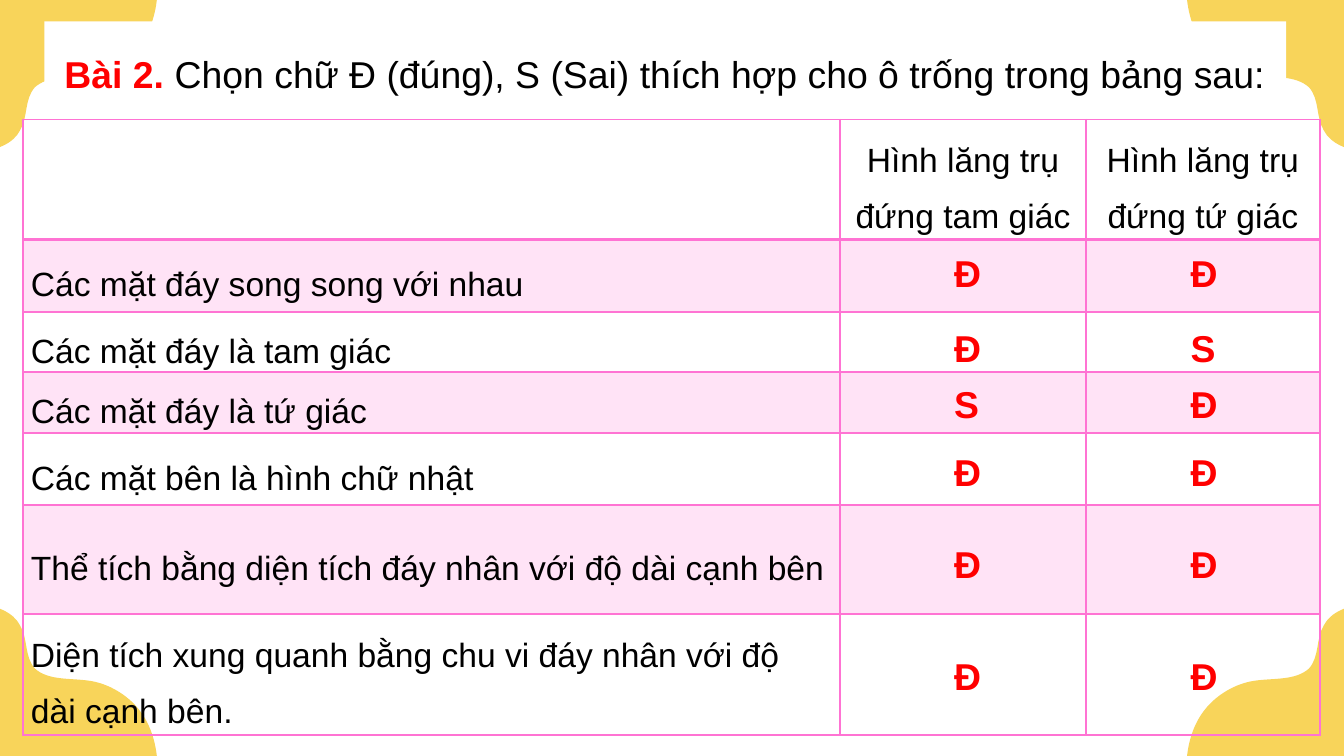
from lxml import etree
from pptx import Presentation
from pptx.dml.color import RGBColor
from pptx.enum.text import MSO_ANCHOR, MSO_AUTO_SIZE, PP_ALIGN
from pptx.oxml.ns import qn
from pptx.util import Inches, Pt

WIDTH, HEIGHT = 10, 5.625
TITLE_ONLY = 5
CENTER, LEFT = PP_ALIGN.CENTER, PP_ALIGN.LEFT
MIDDLE = MSO_ANCHOR.MIDDLE
GROW, FIXED = MSO_AUTO_SIZE.SHAPE_TO_FIT_TEXT, MSO_AUTO_SIZE.NONE
COLORS = {"yellow": "F8D45A", "pink": "FF73D3", "red": "FF0000",
          "black": "000000", "white": "FFFFFF"}

# Corner wave, as distances from the nearest slide corner: start, then curves
WAVE_START = (1.17, -0.03)
WAVE = [
    [(1.16, 0.1), (1.12, 0.24), (1.03, 0.35)],
    [(0.95, 0.45), (0.81, 0.54), (0.66, 0.56)],
    [(0.52, 0.58), (0.36, 0.56), (0.26, 0.65)],
    [(0.18, 0.74), (0.21, 0.87), (0.15, 0.97)],
    [(0.1, 1.07), (-0.03, 1.12), (-0.16, 1.13)],
    [(-0.28, 1.15), (-0.41, 1.14), (-0.54, 1.15)],
    [(-0.6, 1.16), (-0.66, 1.17), (-0.71, 1.21)],
    [(-0.75, 1.23), (-0.77, 1.27), (-0.79, 1.31)],
    [(-0.87, 1.47), (-0.88, 1.65), (-1, 1.79)],
    [(-1.02, 1.81), (-1.04, 1.84), (-1.07, 1.86)],
]
WAVE_END = [(-2.09, 1.86), (-2.09, -0.04), (1.17, -0.04)]

HEADERS = ["", "Hình lăng trụ đứng tam giác", "Hình lăng trụ đứng tứ giác"]
# Statement, its two answers, top of the answers
STATEMENTS = [
    ("Các mặt đáy song song với nhau", "ĐĐ", 1.81),
    ("Các mặt đáy là tam giác", "ĐS", 2.37),
    ("Các mặt đáy là tứ giác", "SĐ", 2.79),
    ("Các mặt bên là hình chữ nhật", "ĐĐ", 3.29),
    ("Thể tích bằng diện tích đáy nhân với độ dài cạnh bên", "ĐĐ", 3.98),
    ("Diện tích xung quanh bằng chu vi đáy nhân với độ dài cạnh bên.", "ĐĐ", 4.81),
]
COLUMN_WIDTHS = [6.08, 1.83, 1.74]
ROW_HEIGHTS = [0.89, 0.54, 0.45, 0.45, 0.54, 0.81, 0.9]
ANSWER_LEFTS = [7, 8.76]


def color(name):
    return RGBColor.from_string(COLORS[name])


def set_all(target, **values):
    for name, value in values.items():
        setattr(target, name, value)


def add_span(para, text, size, shade, bold=False):
    span = para.add_run()
    span.text = text
    set_all(span.font, name="Arial", size=Pt(size), bold=bold)
    span.font.color.rgb = color(shade)


def bend_lines(shape, curves):
    """Turn the first straight segments of a freeform into Bezier curves."""
    lines = list(shape._element.iter(qn("a:lnTo")))
    for line, controls in zip(lines, curves):
        curve = etree.Element(qn("a:cubicBezTo"))
        for x, y in controls:
            etree.SubElement(curve, qn("a:pt"),
                             x=str(x - shape.left), y=str(y - shape.top))
        line.getparent().replace(line, curve)


def add_corner(page, right, bottom):
    def place(point):
        x, y = point
        return (Inches(WIDTH - x if right else x), Inches(HEIGHT - y if bottom else y))

    curves = [[place(point) for point in controls] for controls in WAVE]
    builder = page.shapes.build_freeform(*place(WAVE_START))
    builder.add_line_segments(
        [controls[-1] for controls in curves] + [place(p) for p in WAVE_END], close=True)
    corner = builder.convert_to_shape()
    bend_lines(corner, curves)
    corner.shadow.inherit = False
    corner.fill.solid()
    corner.fill.fore_color.rgb = color("yellow")
    corner.line.fill.background()


def format_title(page):
    title = page.shapes.title
    set_all(title, left=Inches(0.33), top=Inches(0.16),
            width=Inches(9.24), height=Inches(0.61))
    title.fill.solid()
    title.fill.fore_color.rgb = color("white")
    set_all(title.text_frame, word_wrap=True, auto_size=FIXED, vertical_anchor=MIDDLE)
    para = title.text_frame.paragraphs[0]
    set_all(para, alignment=CENTER, line_spacing=1.5, space_before=Pt(0))
    add_span(para, "Bài 2. ", 20, "red", bold=True)
    add_span(para, "Chọn chữ Đ (đúng), S (Sai) thích hợp cho ô trống trong bảng sau:",
             20, "black")
    # Bring the title in front of the corners
    page.shapes._spTree.append(title._element)


def set_borders(cell, top, bottom):
    properties = cell._tc.get_or_add_tcPr()
    for index, (side, points) in enumerate(
            [("lnL", 1), ("lnR", 1), ("lnT", top), ("lnB", bottom)]):
        line = etree.Element(qn("a:" + side), w=str(Pt(points)))
        fill = etree.SubElement(line, qn("a:solidFill"))
        etree.SubElement(fill, qn("a:srgbClr"), val=COLORS["pink"])
        properties.insert(index, line)


def set_fill(cell, tinted):
    if not tinted:
        cell.fill.background()
        return
    cell.fill.solid()
    cell.fill.fore_color.rgb = color("pink")
    shade = cell._tc.tcPr.find(".//" + qn("a:solidFill") + "/" + qn("a:srgbClr"))
    etree.SubElement(shade, qn("a:alpha"), val="20000")


def fill_cell(cell, text, alignment):
    set_all(cell, margin_left=Inches(0.06), margin_right=Inches(0.06),
            margin_top=0, margin_bottom=0, vertical_anchor=MIDDLE)
    para = cell.text_frame.paragraphs[0]
    set_all(para, alignment=alignment, line_spacing=1.5,
            space_before=Pt(6), space_after=Pt(6))
    add_span(para, text, 18, "black")


def add_statement_table(page):
    rows = [HEADERS] + [[statement, "", ""] for statement, _, _ in STATEMENTS]
    table = page.shapes.add_table(
        len(rows), len(HEADERS), Inches(0.17), Inches(0.89),
        Inches(sum(COLUMN_WIDTHS)), Inches(sum(ROW_HEIGHTS))).table
    set_all(table, first_row=False, horz_banding=False)
    for column, width in zip(table.columns, COLUMN_WIDTHS):
        column.width = Inches(width)
    for r, texts in enumerate(rows):
        table.rows[r].height = Inches(ROW_HEIGHTS[r])
        for c, text in enumerate(texts):
            cell = table.cell(r, c)
            set_fill(cell, tinted=r % 2 == 1)
            set_borders(cell, top=2 if r == 1 else 1, bottom=2 if r == 0 else 1)
            if text:
                fill_cell(cell, text, CENTER if r == 0 else LEFT)


def add_answer(page, letter, left, top):
    width = 0.39 if letter == "S" else 0.41
    box = page.shapes.add_textbox(Inches(left), Inches(top), Inches(width), Inches(0.44))
    set_all(box.text_frame, word_wrap=False, auto_size=GROW)
    add_span(box.text_frame.paragraphs[0], letter, 20, "red", bold=True)


def main():
    deck = Presentation()
    set_all(deck, slide_width=Inches(WIDTH), slide_height=Inches(HEIGHT))
    page = deck.slides.add_slide(deck.slide_layouts[TITLE_ONLY])

    # Yellow corners, mirrored from one outline
    for bottom in (False, True):
        for right in (True, False):
            add_corner(page, right, bottom)

    format_title(page)
    add_statement_table(page)

    # Answers, column by column
    for column, left in enumerate(ANSWER_LEFTS):
        for _, answers, top in STATEMENTS:
            add_answer(page, answers[column], left, top)

    deck.save("out.pptx")


if __name__ == "__main__":
    main()
